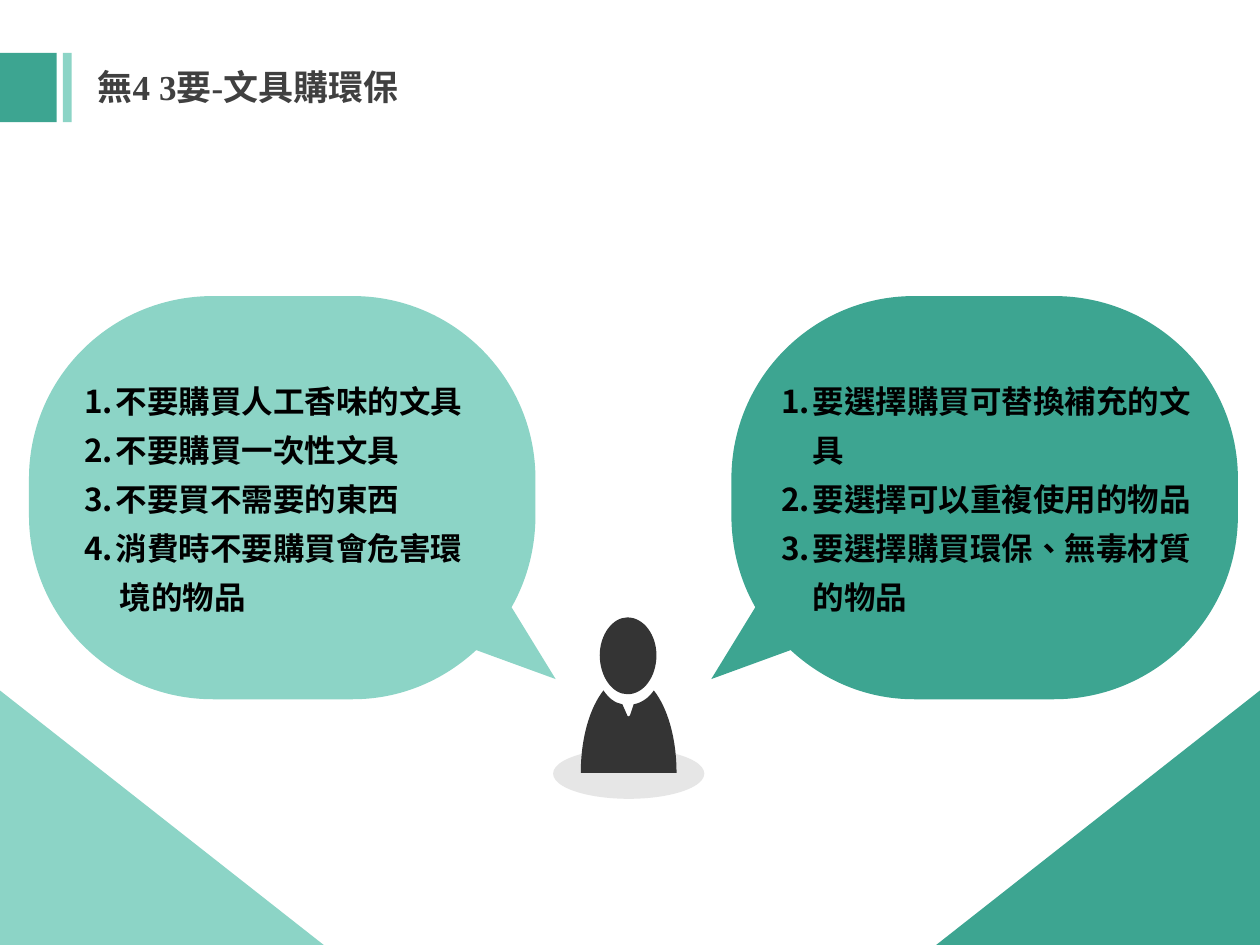
from dataclasses import dataclass

from lxml.etree import SubElement
from pptx import Presentation
from pptx.dml.color import RGBColor
from pptx.enum.lang import MSO_LANGUAGE_ID
from pptx.enum.shapes import MSO_SHAPE
from pptx.enum.text import MSO_ANCHOR, MSO_AUTO_SIZE, PP_ALIGN
from pptx.oxml.ns import qn
from pptx.util import Inches, Pt


@dataclass(frozen=True)
class Theme:
    light: str = "8CD4C6"
    dark: str = "3DA591"
    white: str = "FFFFFF"
    shadow: str = "E6E6E6"
    person: str = "343434"
    title: str = "404040"
    body: str = "000000"
    font: str = "Times New Roman"
    title_size: int = 20
    body_size: int = 18
    line_height: int = 28


COLUMNS, ROWS = 100, 75
MIRROR_SUM = 100.55

BUBBLE = [
    (28, 23.5),
    (36, 23.5, 42.5, 30, 42.5, 38),
    (42.5, 40.9),
    (42.5, 43.6, 41.8, 46.1, 40.6, 48.2),
    (44.1, 53.9),
    (37.8, 51.6),
    (35.2, 54, 31.8, 55.5, 28, 55.5),
    (16.9, 55.5),
    (8.8, 55.5, 2.3, 48.9, 2.3, 40.9),
    (2.3, 38),
    (2.3, 30, 8.8, 23.5, 16.9, 23.5),
    (28, 23.5),
]
HEAD = [
    (52.1, 52),
    (52.1, 53.7, 51.1, 55.1, 49.8, 55.1),
    (48.6, 55.1, 47.6, 53.7, 47.6, 52),
    (47.6, 50.4, 48.6, 49, 49.8, 49),
    (51.1, 49, 52.1, 50.4, 52.1, 52),
]
BUST = [
    (51.9, 54.8),
    (51.5, 55.4, 50.9, 55.8, 50.3, 55.9),
    (50, 56.8),
    (49.9, 56.9, 49.8, 56.9, 49.8, 56.8),
    (49.4, 55.9),
    (48.8, 55.8, 48.3, 55.4, 47.9, 54.8),
    (46.8, 56.2, 46.1, 58.6, 46.1, 61.35),
    (53.7, 61.35),
    (53.7, 58.6, 53, 56.2, 51.9, 54.8),
]
AVOID = ["不要購買人工香味的文具", "不要購買一次性文具", "不要買不需要的東西", "消費時不要購買會危害環"]
CHOOSE = ["要選擇購買可替換補充的文具", "要選擇可以重複使用的物品", "要選擇購買環保、無毒材質的物品"]


def mirrored(outline):
    return [
        tuple(MIRROR_SUM - value if index % 2 == 0 else value for index, value in enumerate(segment))
        for segment in outline
    ]


class SlideBuilder:
    def __init__(self, presentation, theme):
        self.theme = theme
        self.slide = presentation.slides.add_slide(presentation.slide_layouts[6])
        self.column = presentation.slide_width / COLUMNS
        self.row = presentation.slide_height / ROWS

    def point(self, x, y):
        return round(x * self.column), round(y * self.row)

    def place(self, left, top, width, height):
        return *self.point(left, top), *self.point(width, height)

    def paint(self, shape, color):
        shape.shadow.inherit = False
        shape.fill.solid()
        shape.fill.fore_color.rgb = RGBColor.from_string(color)
        shape.line.fill.background()
        return shape

    def preset(self, kind, box, color):
        return self.paint(self.slide.shapes.add_shape(kind, *self.place(*box)), color)

    def outline(self, segments, color):
        corners = [self.point(*segment[-2:]) for segment in segments]
        builder = self.slide.shapes.build_freeform(*corners[0])
        builder.add_line_segments(corners[1:], close=True)
        shape = self.paint(builder.convert_to_shape(), color)
        lines = list(shape._element.iter(qn("a:lnTo")))
        for line, segment in zip(lines, segments[1:]):
            if len(segment) == 6:
                self.bend(line, segment, shape)

    def bend(self, line, segment, shape):
        line.clear()
        line.tag = qn("a:cubicBezTo")
        for index in range(0, 6, 2):
            x, y = self.point(*segment[index:index + 2])
            SubElement(line, qn("a:pt"), x=str(x - shape.left), y=str(y - shape.top))

    def triangle(self, left, apex, color):
        self.preset(MSO_SHAPE.ISOSCELES_TRIANGLE, (left, 54.8, 25.7, 20.2), color).adjustments[0] = apex

    def format_runs(self, paragraph, size, color):
        for run in paragraph.runs:
            run.font.name = self.theme.font
            run.font.size = Pt(size)
            run.font.bold = True
            run.font.color.rgb = RGBColor.from_string(color)
            run.font.language_id = MSO_LANGUAGE_ID.TRADITIONAL_CHINESE

    def title(self, text, box):
        shape = self.preset(MSO_SHAPE.RECTANGLE, box, self.theme.white)
        frame = shape.text_frame
        frame.text = text
        frame.word_wrap = True
        frame.vertical_anchor = MSO_ANCHOR.MIDDLE
        frame.margin_left = frame.margin_right = Inches(0.07)
        frame.margin_top = frame.margin_bottom = Inches(0.04)
        paragraph = frame.paragraphs[0]
        paragraph.alignment = PP_ALIGN.LEFT
        self.format_runs(paragraph, self.theme.title_size, self.theme.title)

    def numbered_list(self, items, box, continuation=()):
        frame = self.slide.shapes.add_textbox(*self.place(*box)).text_frame
        frame.text = "\n".join([*items, *continuation])
        frame.word_wrap = True
        frame.auto_size = MSO_AUTO_SIZE.SHAPE_TO_FIT_TEXT
        for index, paragraph in enumerate(frame.paragraphs):
            paragraph.line_spacing = Pt(self.theme.line_height)
            self.format_runs(paragraph, self.theme.body_size, self.theme.body)
            properties = paragraph._p.get_or_add_pPr()
            if index < len(items):
                properties.set("marL", str(Inches(0.25)))
                properties.set("indent", str(Inches(-0.25)))
                SubElement(properties, qn("a:buAutoNum"), type="arabicPeriod")
            else:
                properties.set("marL", str(Inches(0.28)))


def main():
    presentation = Presentation()
    presentation.slide_width, presentation.slide_height = Inches(10), Inches(7.5)
    theme = Theme()
    builder = SlideBuilder(presentation, theme)

    builder.preset(MSO_SHAPE.OVAL, (43.9, 59.4, 12, 4), theme.shadow)
    builder.outline(HEAD, theme.person)
    builder.outline(BUST, theme.person)

    builder.outline(BUBBLE, theme.light)
    builder.outline(mirrored(BUBBLE), theme.dark)
    builder.numbered_list(CHOOSE, (61, 28.9, 36.8, 24.2))

    builder.preset(MSO_SHAPE.RECTANGLE, (0, 4.2, 4.5, 5.5), theme.dark)
    builder.preset(MSO_SHAPE.RECTANGLE, (5, 4.2, 0.7, 5.5), theme.light)
    builder.title("無4 3要-文具購環保", (7.05, 4.8, 40.5, 4.1))

    builder.triangle(0, 0, theme.light)
    builder.triangle(74.3, 1, theme.dark)
    builder.numbered_list(AVOID, (5.7, 28.9, 36.9, 20.3), continuation=["境的物品"])

    presentation.save("out.pptx")


if __name__ == "__main__":
    main()
